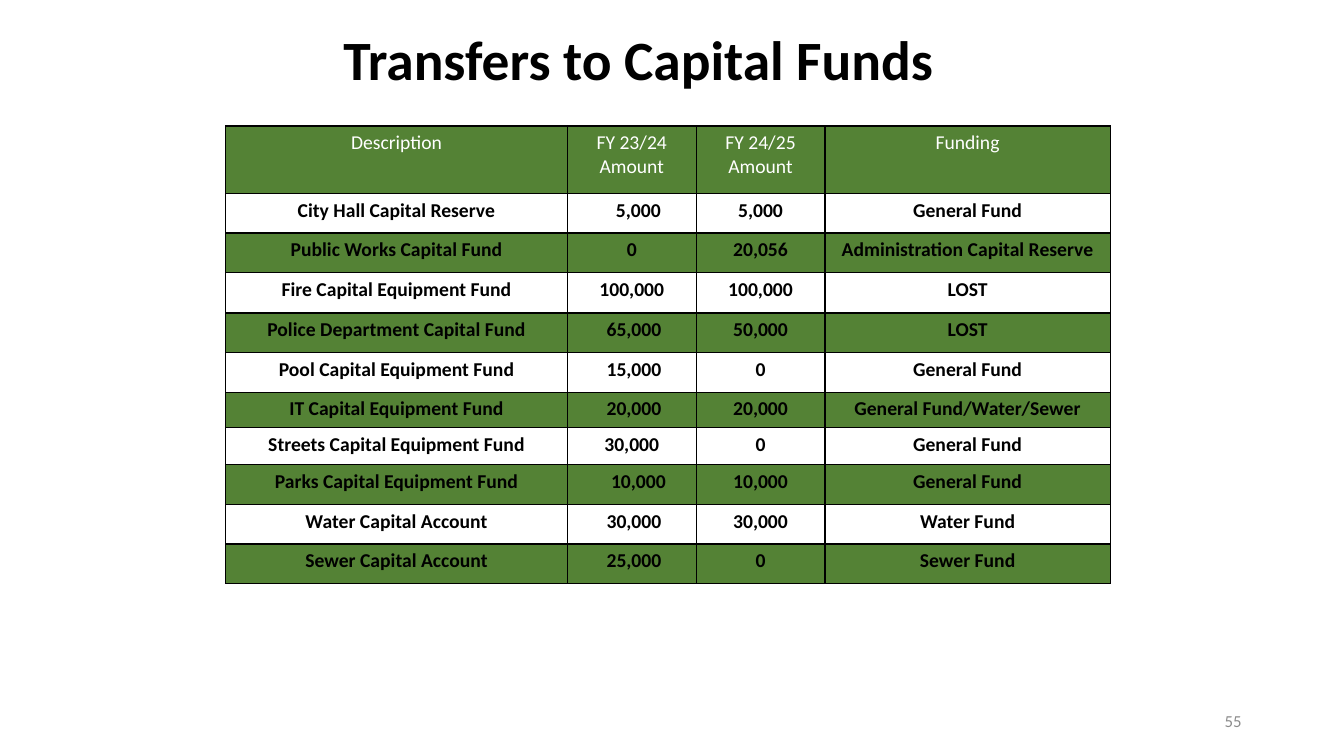
from lxml.etree import SubElement
from pptx import Presentation
from pptx.dml.color import RGBColor
from pptx.enum.text import MSO_ANCHOR, MSO_AUTO_SIZE, PP_ALIGN
from pptx.oxml.ns import qn
from pptx.util import Pt

FONT = "Calibri"
COLORS = {"green": "548235", "white": "FFFFFF", "black": "000000", "gray": "8C8C8C"}

# Table content and measures, in points
HEADINGS = ["Description", "FY 23/24 Amount", "FY 24/25 Amount", "Funding"]
TRANSFERS = [
    ["City Hall Capital Reserve", "5,000", "5,000", "General Fund"],
    ["Public Works Capital Fund", "0", "20,056", "Administration Capital Reserve"],
    ["Fire Capital Equipment Fund", "100,000", "100,000", "LOST"],
    ["Police Department Capital Fund", "65,000", "50,000", "LOST"],
    ["Pool Capital Equipment Fund", "15,000", "0", "General Fund"],
    ["IT Capital Equipment Fund", "20,000", "20,000", "General Fund/Water/Sewer"],
    ["Streets Capital Equipment Fund", "30,000", "0", "General Fund"],
    ["Parks Capital Equipment Fund", "10,000", "10,000", "General Fund"],
    ["Water Capital Account", "30,000", "30,000", "Water Fund"],
    ["Sewer Capital Account", "25,000", "0", "Sewer Fund"],
]
COLUMN_WIDTHS = [244.1, 92, 92, 203.8]
ROW_HEIGHT = 28.3
SPECIAL_HEIGHTS = {0: 48.2, 3: 28.8, 6: 25.4, 7: 26.5}
CELL_MARGIN = 7.2
# Extra left margin of the FY 23/24 amounts, by table row
AMOUNT_INDENTS = {1: 9.5, 8: 9.5, 4: 3.2, 5: 3.2, 6: 3.2, 9: 3.2, 10: 3.2}


def color(name):
    return RGBColor.from_string(COLORS[name])


def write(frame, text, size, color_name, align, bold=False):
    frame.text = text
    para = frame.paragraphs[0]
    para.alignment = align
    para.font.name = FONT
    para.font.size = Pt(size)
    para.font.bold = bold
    para.font.color.rgb = color(color_name)
    return para


def add_title(page, text):
    title = page.shapes.title
    title.left, title.top, title.width, title.height = Pt(168), Pt(18), Pt(576), Pt(54)
    frame = title.text_frame
    frame.auto_size = MSO_AUTO_SIZE.NONE
    frame.vertical_anchor = MSO_ANCHOR.MIDDLE
    para = write(frame, text, 39.6, "black", PP_ALIGN.CENTER, bold=True)
    para.line_spacing = 0.9


def add_page_number(page, text):
    box = page.shapes.add_textbox(Pt(678), Pt(500.4), Pt(216), Pt(28.8))
    frame = box.text_frame
    frame.word_wrap = True
    frame.vertical_anchor = MSO_ANCHOR.MIDDLE
    write(frame, text, 12, "gray", PP_ALIGN.RIGHT)


def add_borders(cell):
    properties = cell._tc.get_or_add_tcPr()
    for position, side in enumerate(("lnL", "lnR", "lnT", "lnB")):
        line = SubElement(properties, qn(f"a:{side}"), w=str(Pt(1)))
        fill = SubElement(line, qn("a:solidFill"))
        SubElement(fill, qn("a:srgbClr"), val=COLORS["black"])
        # Borders come before the fill in the cell properties
        properties.insert(position, line)


def add_transfer_table(page):
    rows = [HEADINGS] + TRANSFERS
    heights = [SPECIAL_HEIGHTS.get(index, ROW_HEIGHT) for index in range(len(rows))]
    frame = page.shapes.add_table(len(rows), len(HEADINGS), Pt(161.2), Pt(90),
                                  Pt(sum(COLUMN_WIDTHS)), Pt(sum(heights)))
    table = frame.table
    for column, width in zip(table.columns, COLUMN_WIDTHS):
        column.width = Pt(width)
    for row_index, texts in enumerate(rows):
        table.rows[row_index].height = Pt(heights[row_index])
        is_heading = row_index == 0
        for column_index, text in enumerate(texts):
            cell = table.cell(row_index, column_index)
            cell.fill.solid()
            cell.fill.fore_color.rgb = color("white" if row_index % 2 else "green")
            add_borders(cell)
            if column_index == 1:
                cell.margin_left = Pt(CELL_MARGIN + AMOUNT_INDENTS.get(row_index, 0))
            write(cell.text_frame, text, 14, "white" if is_heading else "black",
                  PP_ALIGN.CENTER, bold=not is_heading)


def main():
    deck = Presentation()
    deck.slide_width, deck.slide_height = Pt(960), Pt(540)
    page = deck.slides.add_slide(deck.slide_layouts[5])  # title only
    add_title(page, "Transfers to Capital Funds")
    add_transfer_table(page)
    add_page_number(page, "55")
    deck.save("out.pptx")


if __name__ == "__main__":
    main()
